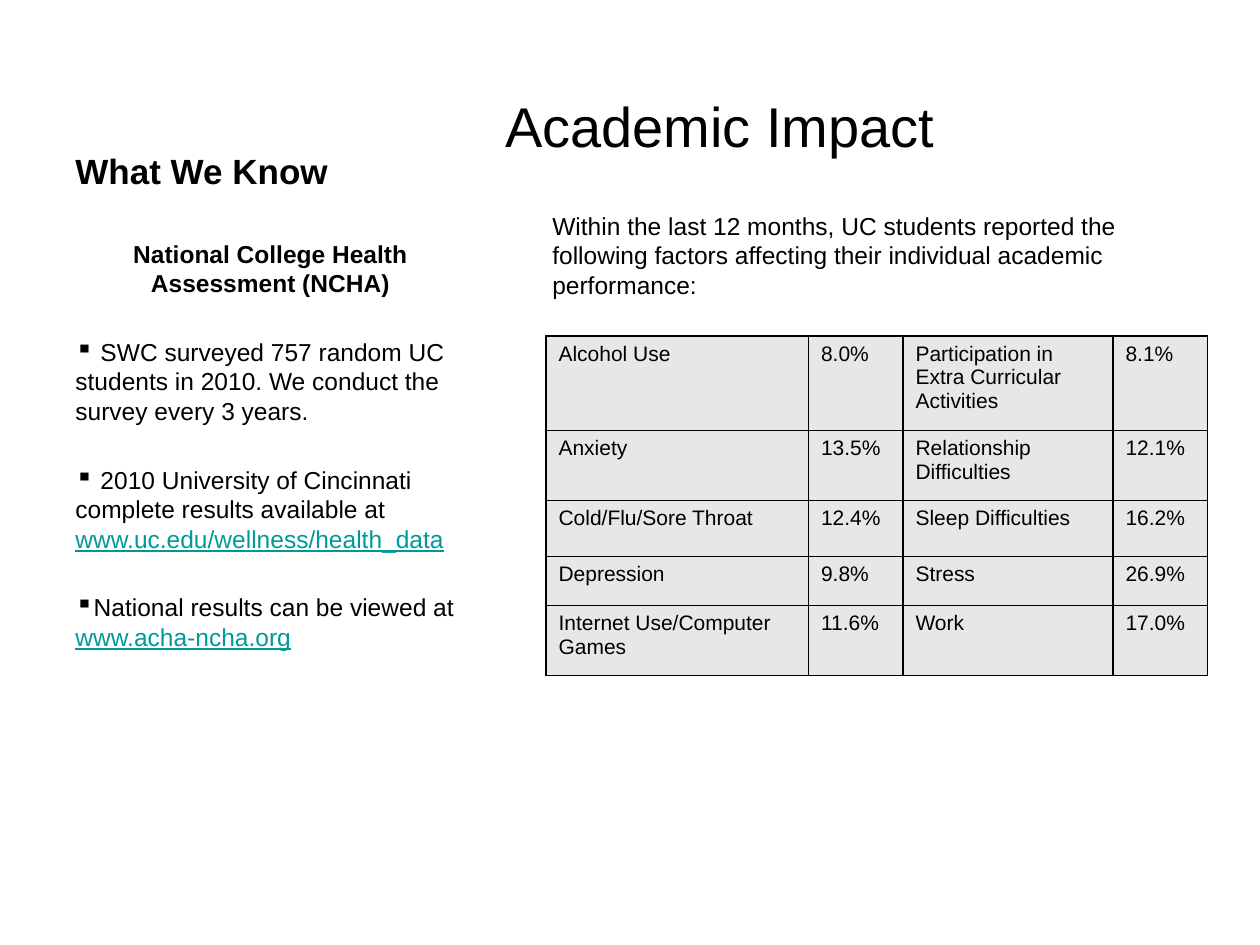
from dataclasses import dataclass

import pptx
import pptx.dml.color
import pptx.enum.text
import pptx.oxml.ns
import pptx.util
from lxml import etree

Pt = pptx.util.Pt
RGB = pptx.dml.color.RGBColor.from_string
qn = pptx.oxml.ns.qn
PP_ALIGN = pptx.enum.text.PP_ALIGN
ANCHOR = pptx.enum.text.MSO_ANCHOR


@dataclass(frozen=True)
class Theme:
    font: str = "Arial"
    text: str = "000000"
    link: str = "009999"
    cell: str = "E7E7E7"
    title: int = 32
    heading: int = 20
    body: int = 14
    table: int = 12
    border: int = 1


THEME = Theme()

FACTS = [
    (" SWC surveyed 757 random UC students in 2010. We conduct the survey every 3 years.", ""),
    (" 2010 University of Cincinnati complete results available at ",
     "www.uc.edu/wellness/health_data"),
    ("National results can be viewed at ", "www.acha-ncha.org"),
]
FACTORS = [
    ("Alcohol Use", "8.0%", "Participation in Extra Curricular Activities", "8.1%"),
    ("Anxiety", "13.5%", "Relationship Difficulties", "12.1%"),
    ("Cold/Flu/Sore Throat", "12.4%", "Sleep Difficulties", "16.2%"),
    ("Depression", "9.8%", "Stress", "26.9%"),
    ("Internet Use/Computer Games", "11.6%", "Work", "17.0%"),
]
COL_WIDTHS = [150, 54, 120, 54]
ROW_HEIGHTS = [54, 40, 32, 28, 40]


def format_run(r, size, color=THEME.text, bold=False, underline=False):
    r.font.name = THEME.font
    r.font.size = Pt(size)
    r.font.color.rgb = RGB(color)
    r.font.bold = bold
    r.font.underline = underline


def write(p, text, size, bold=False):
    p.text = text
    format_run(p.runs[0], size, bold=bold)


def add_text_box(s, box):
    tf = s.shapes.add_textbox(*map(Pt, box)).text_frame
    tf.word_wrap = True
    return tf


def add_heading(s, box):
    tf = add_text_box(s, box)
    tf.vertical_anchor = ANCHOR.BOTTOM
    write(tf.paragraphs[0], "What We Know", THEME.heading, bold=True)


def add_facts(s, box):
    tf = add_text_box(s, box)
    tf.margin_top = Pt(23.5)
    p = tf.paragraphs[0]
    write(p, "National College Health Assessment (NCHA)", THEME.body, bold=True)
    p.alignment = PP_ALIGN.CENTER
    for text, link in FACTS:
        p = tf.add_paragraph()
        write(p, text, THEME.body)
        p.space_before = Pt(22.5)
        pPr = p._p.get_or_add_pPr()
        pPr.set("marL", "0")
        pPr.set("indent", "0")
        etree.SubElement(pPr, qn("a:buChar")).set("char", "▪")
        if link:
            r = p.add_run()
            r.text = link
            format_run(r, THEME.body, THEME.link, underline=True)


def add_intro(s, box):
    tf = add_text_box(s, box)
    indent = Pt(27)
    p = tf.paragraphs[0]
    write(p, "Academic Impact", THEME.title)
    p._p.get_or_add_pPr().set("marL", str(indent))
    p._p.get_or_add_pPr().set("indent", str(-indent))
    p = tf.add_paragraph()
    write(p, "Within the last 12 months, UC students reported the following factors "
             "affecting their individual academic performance:", THEME.body)
    p.space_before = Pt(30)
    p._p.get_or_add_pPr().set("marL", str(indent))


def add_borders(cell):
    tcPr = cell._tc.get_or_add_tcPr()
    for i, side in enumerate(("lnL", "lnR", "lnT", "lnB")):
        ln = etree.Element(qn(f"a:{side}"), w=str(Pt(THEME.border)))
        fill = etree.SubElement(ln, qn("a:solidFill"))
        etree.SubElement(fill, qn("a:srgbClr")).set("val", THEME.text)
        tcPr.insert(i, ln)


def add_factor_table(s, box):
    table = s.shapes.add_table(len(FACTORS), len(COL_WIDTHS), *map(Pt, box)).table
    table.first_row = False
    table.horz_banding = False
    for col, width in zip(table.columns, COL_WIDTHS):
        col.width = Pt(width)
    for row, height, values in zip(table.rows, ROW_HEIGHTS, FACTORS):
        row.height = Pt(height)
        for cell, value in zip(row.cells, values):
            write(cell.text_frame.paragraphs[0], value, THEME.table)
            cell.fill.solid()
            cell.fill.fore_color.rgb = RGB(THEME.cell)
            add_borders(cell)


def main():
    prs = pptx.Presentation()
    prs.slide_width, prs.slide_height = Pt(720), Pt(540)
    s = prs.slides.add_slide(prs.slide_layouts[6])

    # Left column: heading and survey facts
    add_heading(s, (36, 21.5, 237, 91.5))
    add_facts(s, (36, 113, 237, 369.5))

    # Right column: title, introduction and table
    add_intro(s, (281.5, 48.5, 402.5, 434))
    add_factor_table(s, (312, 192, sum(COL_WIDTHS), sum(ROW_HEIGHTS)))

    prs.save("out.pptx")


if __name__ == "__main__":
    main()
